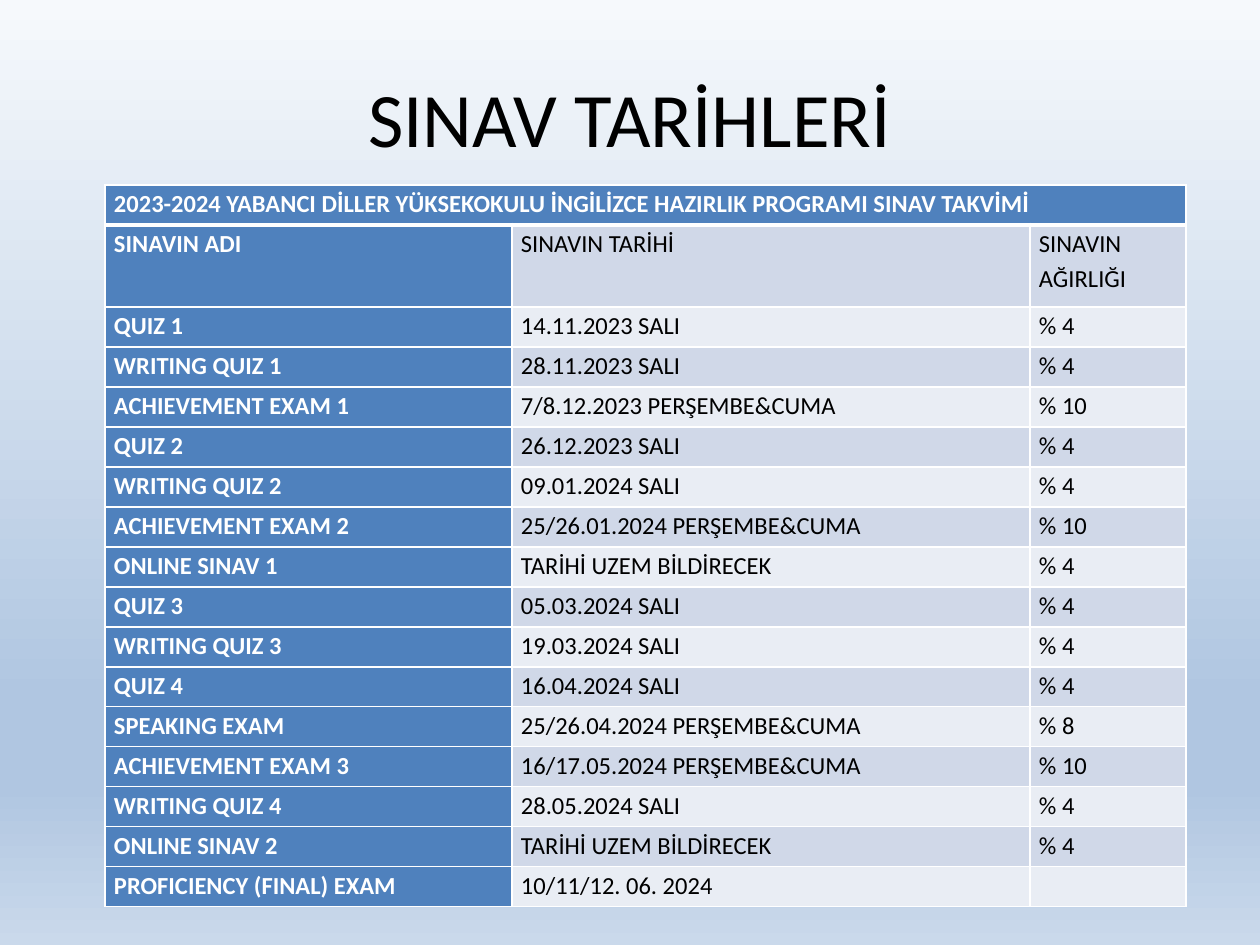
from lxml.etree import SubElement
from pptx import Presentation
from pptx.dml.color import RGBColor
from pptx.enum.text import MSO_ANCHOR as Anchor, PP_ALIGN as Align
from pptx.oxml.ns import qn
from pptx.util import Emu, Pt

EMU_PER_PX = 914400 // 126
FONT = "Calibri"
BLACK = RGBColor(0x00, 0x00, 0x00)
WHITE = RGBColor(0xFF, 0xFF, 0xFF)
BLUE = RGBColor(0x4F, 0x81, 0xBD)
BAND_DARK = RGBColor(0xD0, 0xD8, 0xE8)
BAND_LIGHT = RGBColor(0xE9, 0xED, 0xF4)
SKY_TOP = RGBColor(0xF6, 0xF9, 0xFC)
SKY_DEEP = RGBColor(0xB0, 0xC6, 0xE1)
SKY_BOTTOM = RGBColor(0xCA, 0xD9, 0xEB)
SKY = [(0, SKY_TOP), (74, SKY_DEEP), (83, SKY_DEEP), (100, SKY_BOTTOM)]

TITLE = "SINAV TARİHLERİ"
CALENDAR = "2023-2024 YABANCI DİLLER YÜKSEKOKULU İNGİLİZCE HAZIRLIK PROGRAMI SINAV TAKVİMİ"
EXAMS = [
    ("SINAVIN ADI", "SINAVIN TARİHİ", "SINAVIN AĞIRLIĞI"),
    ("QUIZ 1", "14.11.2023 SALI", "% 4"),
    ("WRITING QUIZ 1", "28.11.2023 SALI", "% 4"),
    ("ACHIEVEMENT EXAM 1", "7/8.12.2023 PERŞEMBE&CUMA", "% 10"),
    ("QUIZ 2", "26.12.2023 SALI", "% 4"),
    ("WRITING QUIZ 2", "09.01.2024 SALI", "% 4"),
    ("ACHIEVEMENT EXAM 2", "25/26.01.2024 PERŞEMBE&CUMA", "% 10"),
    ("ONLINE SINAV 1", "TARİHİ UZEM BİLDİRECEK", "% 4"),
    ("QUIZ 3", "05.03.2024 SALI", "% 4"),
    ("WRITING QUIZ 3", "19.03.2024 SALI", "% 4"),
    ("QUIZ 4", "16.04.2024 SALI", "% 4"),
    ("SPEAKING EXAM", "25/26.04.2024 PERŞEMBE&CUMA", "% 8"),
    ("ACHIEVEMENT EXAM 3", "16/17.05.2024 PERŞEMBE&CUMA", "% 10"),
    ("WRITING QUIZ 4", "28.05.2024 SALI", "% 4"),
    ("ONLINE SINAV 2", "TARİHİ UZEM BİLDİRECEK", "% 4"),
    ("PROFICIENCY (FINAL) EXAM", "10/11/12. 06. 2024", ""),
]
COLUMN_WIDTHS = [407, 518, 156]
ROW_HEIGHT = 40
HEADING_HEIGHT = 82
CELL_MARGINS = {"margin_left": 9, "margin_right": 9, "margin_top": 0, "margin_bottom": 0}
CELL_PARA = {"alignment": Align.JUSTIFY, "line_spacing": 1.15, "space_after": Pt(10)}


def px(length):
    return Emu(length * EMU_PER_PX)


def apply(target, values):
    for name, value in values.items():
        setattr(target, name, value)


def write(frame, text, size, color, bold, para_format):
    para = frame.paragraphs[0]
    para.text = text
    apply(para, para_format)
    for span in para.runs:
        apply(span.font, {"name": FONT, "size": Pt(size), "bold": bold})
        span.font.color.rgb = color


def add_color(parent, color):
    SubElement(parent, qn("a:srgbClr"), val=str(color))


def paint_background(page):
    fill = page.background.fill
    fill.gradient()
    fill.gradient_angle = 270
    stops = next(page.element.iter(qn("a:gsLst")))
    for stop in list(stops):
        stops.remove(stop)
    for percent, color in SKY:
        add_color(SubElement(stops, qn("a:gs"), pos=str(percent * 1000)), color)


def add_title(page):
    title = page.shapes.title
    apply(title, {"left": px(63), "top": px(38), "width": px(1134), "height": px(157)})
    title.text_frame.vertical_anchor = Anchor.MIDDLE
    write(title.text_frame, TITLE, 44, BLACK, False, {"alignment": Align.CENTER})


def draw_borders(cell, top, bottom):
    properties = cell._tc.get_or_add_tcPr()
    for side, width in {"lnL": 1, "lnR": 1, "lnT": top, "lnB": bottom}.items():
        line = SubElement(properties, qn("a:" + side), w=str(Pt(width)))
        add_color(SubElement(line, qn("a:solidFill")), WHITE)


def format_cell(cell, text, row, column):
    strong = row == 0 or column == 0
    band = BAND_DARK if row % 2 else BAND_LIGHT
    apply(cell, {name: px(margin) for name, margin in CELL_MARGINS.items()})
    draw_borders(cell, 3 if row == 1 else 1, 3 if row == 0 else 1)
    cell.fill.solid()
    cell.fill.fore_color.rgb = BLUE if strong else band
    write(cell.text_frame, text, 14, WHITE if strong else BLACK, strong, CELL_PARA)


def add_exam_table(page):
    rows = [(CALENDAR, "", "")] + EXAMS
    heights = [ROW_HEIGHT, HEADING_HEIGHT] + [ROW_HEIGHT] * (len(rows) - 2)
    table = page.shapes.add_table(
        len(rows), len(COLUMN_WIDTHS), px(105), px(185),
        px(sum(COLUMN_WIDTHS)), px(sum(heights))).table
    for column, width in zip(table.columns, COLUMN_WIDTHS):
        column.width = px(width)
    for row, height in zip(table.rows, heights):
        row.height = px(height)
    for row, texts in enumerate(rows):
        for column, text in enumerate(texts):
            format_cell(table.cell(row, column), text, row, column)
    table.cell(0, 0).merge(table.cell(0, 2))


def main():
    deck = Presentation()
    apply(deck, {"slide_width": px(1260), "slide_height": px(945)})
    page = deck.slides.add_slide(deck.slide_layouts[5])
    paint_background(page)
    add_title(page)
    add_exam_table(page)
    deck.save("out.pptx")


if __name__ == "__main__":
    main()
